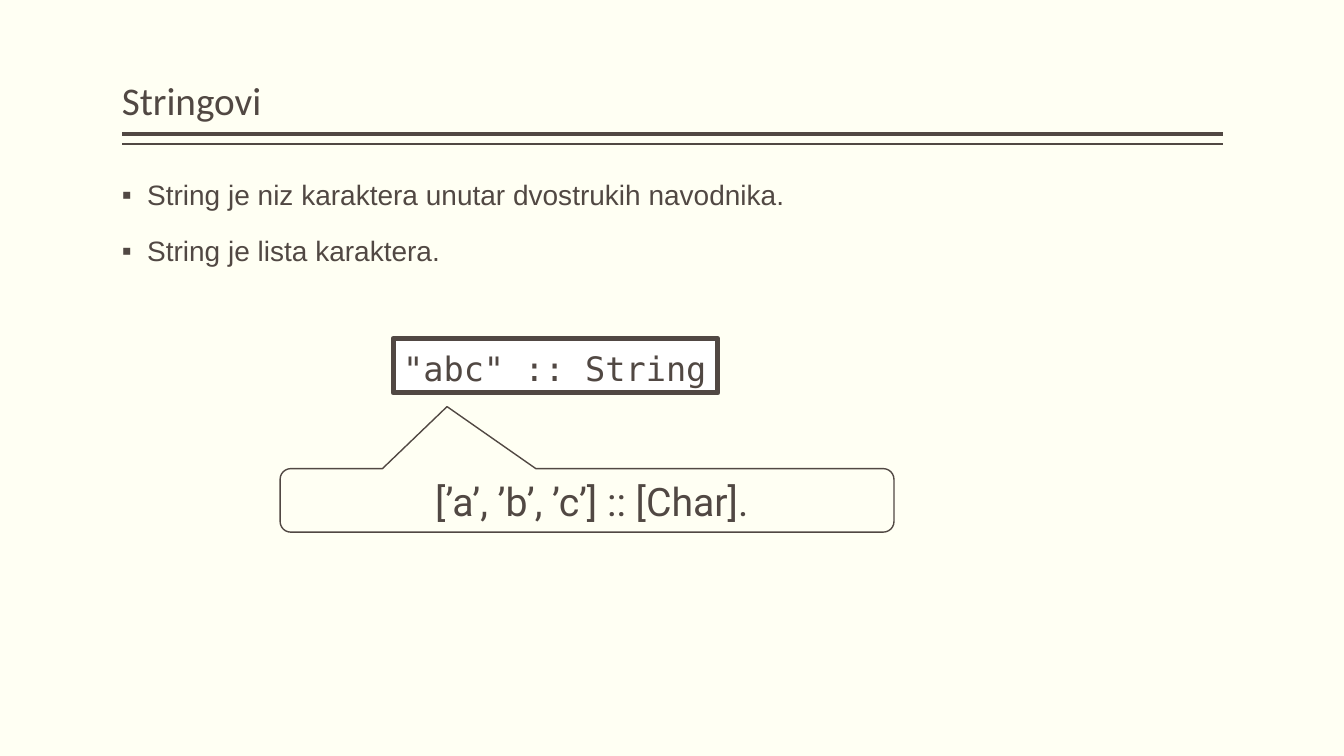
from pptx import Presentation
from pptx.dml.color import RGBColor as RGB
from pptx.enum.shapes import MSO_CONNECTOR as LINK, MSO_SHAPE as SHAPE
from pptx.enum.text import MSO_ANCHOR as ANCHOR, MSO_AUTO_SIZE as AUTO, PP_ALIGN as ALIGN
from pptx.oxml.ns import qn
from pptx.util import Cm, Pt
from lxml.etree import SubElement as Sub

COLORS = {"back": "FFFFF3", "ink": "514843", "code": "FFFFFF"}
LEFT, WIDTH = 3.07, 27.74


def color(name):
    return RGB.from_string(COLORS[name])


def bullet(para, char="▪", indent=0.64):
    props = para._p.get_or_add_pPr()
    props.set("marL", str(Cm(indent)))
    props.set("indent", str(-Cm(indent)))
    Sub(props, qn("a:buFont")).set("typeface", "Arial")
    Sub(props, qn("a:buChar")).set("char", char)


def write(frame, *lines, font, size, align=ALIGN.LEFT, anchor=ANCHOR.MIDDLE,
          space=1.0, before=0, inset=0.25, wrap=True, grow=False, marked=False):
    frame.word_wrap = wrap
    frame.auto_size = AUTO.SHAPE_TO_FIT_TEXT if grow else AUTO.NONE
    frame.vertical_anchor = anchor
    frame.margin_left = frame.margin_right = Cm(inset)
    frame.margin_top = frame.margin_bottom = Cm(0.13)
    for i, line in enumerate(lines):
        para = frame.add_paragraph() if i else frame.paragraphs[0]
        para.alignment = align
        para.line_spacing = space
        para.space_before = Pt(before)
        if marked:
            bullet(para)
        run = para.add_run()
        run.text = line
        run.font.name = font
        run.font.size = Pt(size)
        run.font.color.rgb = color("ink")


def add_text(slide, top, height, *lines, **style):
    box = slide.shapes.add_textbox(Cm(LEFT), Cm(top), Cm(WIDTH), Cm(height))
    write(box.text_frame, *lines, space=0.9, inset=0, **style)


def add_rule(slide, top, weight):
    rule = slide.shapes.add_connector(
        LINK.STRAIGHT, Cm(LEFT + WIDTH), Cm(top), Cm(LEFT), Cm(top))
    rule.line.color.rgb = color("ink")
    rule.line.width = Pt(weight)
    Sub(rule._element.spPr, qn("a:effectLst"))


def add_box(slide, kind, area, weight, text, fill=None, adjust=(), **style):
    box = slide.shapes.add_shape(kind, *map(Cm, area))
    box.shadow.inherit = False
    for i, value in enumerate(adjust):
        box.adjustments[i] = value
    if fill:
        box.fill.solid()
        box.fill.fore_color.rgb = color(fill)
    else:
        box.fill.background()
    box.line.color.rgb = color("ink")
    box.line.width = Pt(weight)
    write(box.text_frame, text, grow=True, **style)


def main():
    deck = Presentation()
    deck.slide_width, deck.slide_height = Cm(33.87), Cm(19.05)
    slide = deck.slides.add_slide(deck.slide_layouts[6])
    slide.background.fill.solid()
    slide.background.fill.fore_color.rgb = color("back")

    # Title with double rule
    add_rule(slide, 3.38, 3)
    add_rule(slide, 3.63, 1)
    add_text(slide, 0.2, 3.05, "Stringovi", font="Calibri", size=28,
             anchor=ANCHOR.BOTTOM)

    # Bullet points
    add_text(slide, 4.45, 12.7,
             "String je niz karaktera unutar dvostrukih navodnika.",
             "String je lista karaktera.",
             font="Arial", size=20, anchor=ANCHOR.TOP, before=18, marked=True)

    # Code and its callout
    add_box(slide, SHAPE.RECTANGLE, (9.91, 8.53, 8.18, 1.37), 3.78,
            '"abc" :: String', fill="code", font="DejaVu Sans Mono", size=24,
            space=1.1, wrap=False)
    add_box(slide, SHAPE.ROUNDED_RECTANGULAR_CALLOUT, (7.06, 11.81, 15.47, 1.6), 1,
            " [’a’, ’b’, ’c’] :: [Char].", adjust=(-0.228, -1.477, 0.167),
            font="Roboto", size=28, align=ALIGN.CENTER)

    deck.save("out.pptx")


if __name__ == "__main__":
    main()
